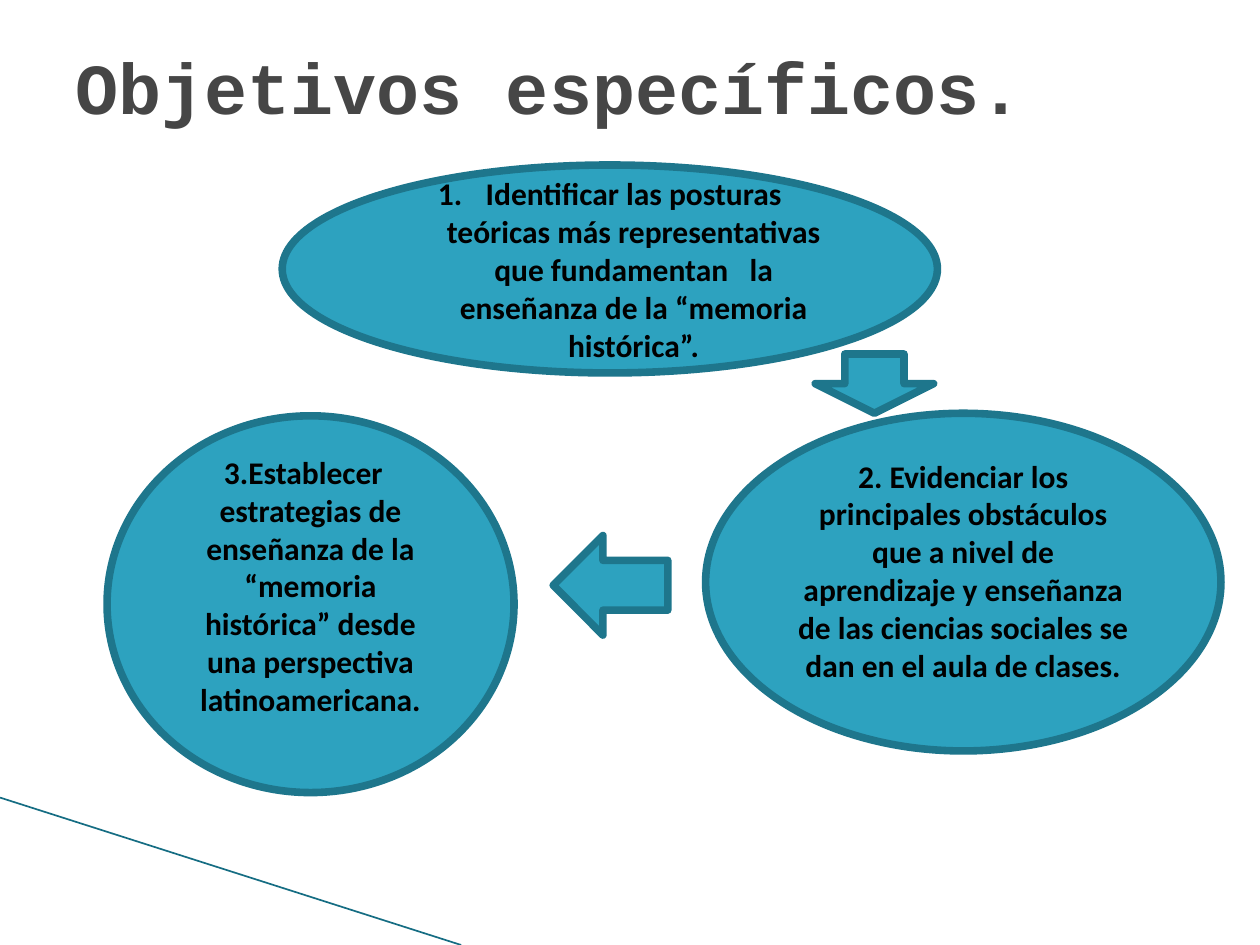
from lxml import etree
from pptx import Presentation
from pptx.dml.color import RGBColor
from pptx.enum.shapes import MSO_CONNECTOR, MSO_SHAPE
from pptx.enum.text import MSO_ANCHOR, PP_ALIGN
from pptx.oxml.ns import qn
from pptx.util import Inches, Pt

OVAL = MSO_SHAPE.OVAL
DOWN_ARROW = MSO_SHAPE.DOWN_ARROW
LEFT_ARROW = MSO_SHAPE.LEFT_ARROW
STRAIGHT = MSO_CONNECTOR.STRAIGHT
MIDDLE = MSO_ANCHOR.MIDDLE
LEFT = PP_ALIGN.LEFT
CENTER = PP_ALIGN.CENTER
TITLE_ONLY = 5


def color(value):
    return RGBColor.from_string(value)


class ObjectivesPage:
    fill = "2DA2BF"
    outline = "1E768C"
    accent = "156D83"
    title_color = "464646"
    text_color = "000000"
    title_font = "Courier New"
    body_font = "Calibri"

    def __init__(self, deck):
        self.page = deck.slides.add_slide(deck.slide_layouts[TITLE_ONLY])

    def set_text(self, frame, text, font, size, ink, align):
        frame.text = text
        frame.word_wrap = True
        frame.vertical_anchor = MIDDLE
        para = frame.paragraphs[0]
        para.alignment = align
        for span in para.runs:
            span.font.name = font
            span.font.size = Pt(size)
            span.font.bold = True
            span.font.color.rgb = color(ink)

    def title(self, text, left, top, width, height):
        box = self.page.shapes.title
        box.left, box.top = Inches(left), Inches(top)
        box.width, box.height = Inches(width), Inches(height)
        self.set_text(box.text_frame, text, self.title_font, 41, self.title_color, LEFT)

    def line(self, x1, y1, x2, y2):
        line = self.page.shapes.add_connector(
            STRAIGHT, Inches(x1), Inches(y1), Inches(x2), Inches(y2))
        line.line.color.rgb = color(self.accent)
        line.line.width = Pt(0.95)
        etree.SubElement(line._element.spPr, qn("a:effectLst"))

    def shape(self, kind, left, top, width, height):
        shape = self.page.shapes.add_shape(
            kind, Inches(left), Inches(top), Inches(width), Inches(height))
        shape.shadow.inherit = False
        shape.fill.solid()
        shape.fill.fore_color.rgb = color(self.fill)
        shape.line.color.rgb = color(self.outline)
        shape.line.width = Pt(4.33)
        return shape

    def objective(self, text, left, top, width, height, bottom=0.05, numbered=False):
        frame = self.shape(OVAL, left, top, width, height).text_frame
        self.set_text(frame, text, self.body_font, 18, self.text_color, CENTER)
        frame.margin_bottom = Inches(bottom)
        if numbered:
            properties = frame.paragraphs[0]._p.get_or_add_pPr()
            properties.set("marL", str(Inches(0.38)))
            properties.set("indent", str(-Inches(0.38)))
            etree.SubElement(properties, qn("a:buFont"), typeface="+mj-lt")
            etree.SubElement(properties, qn("a:buAutoNum"), type="arabicPeriod")


def main():
    deck = Presentation()
    deck.slide_width, deck.slide_height = Inches(10), Inches(7.5)
    page = ObjectivesPage(deck)
    page.line(0, 6.33, 3.66, 7.5)
    page.title("Objetivos específicos.", 0.5, 0.13, 9, 1.1)
    page.objective(
        "Identificar las posturas teóricas más representativas que fundamentan   "
        "la enseñanza de la “memoria histórica”.",
        2.24, 1.31, 5.2, 1.65, numbered=True)
    page.objective(
        "2. Evidenciar los principales obstáculos que a nivel de aprendizaje y "
        "enseñanza de las ciencias sociales se dan en el aula de clases.",
        5.6, 3.28, 4.09, 2.68, bottom=0.24)
    page.objective(
        "3.Establecer   estrategias de enseñanza de la “memoria histórica” desde "
        "una perspectiva latinoamericana.",
        0.85, 3.3, 3.23, 2.99, bottom=0.35)
    page.shape(DOWN_ARROW, 6.47, 2.81, 0.94, 0.47)
    page.shape(LEFT_ARROW, 4.39, 4.25, 0.91, 0.79)
    deck.save("out.pptx")


if __name__ == "__main__":
    main()
